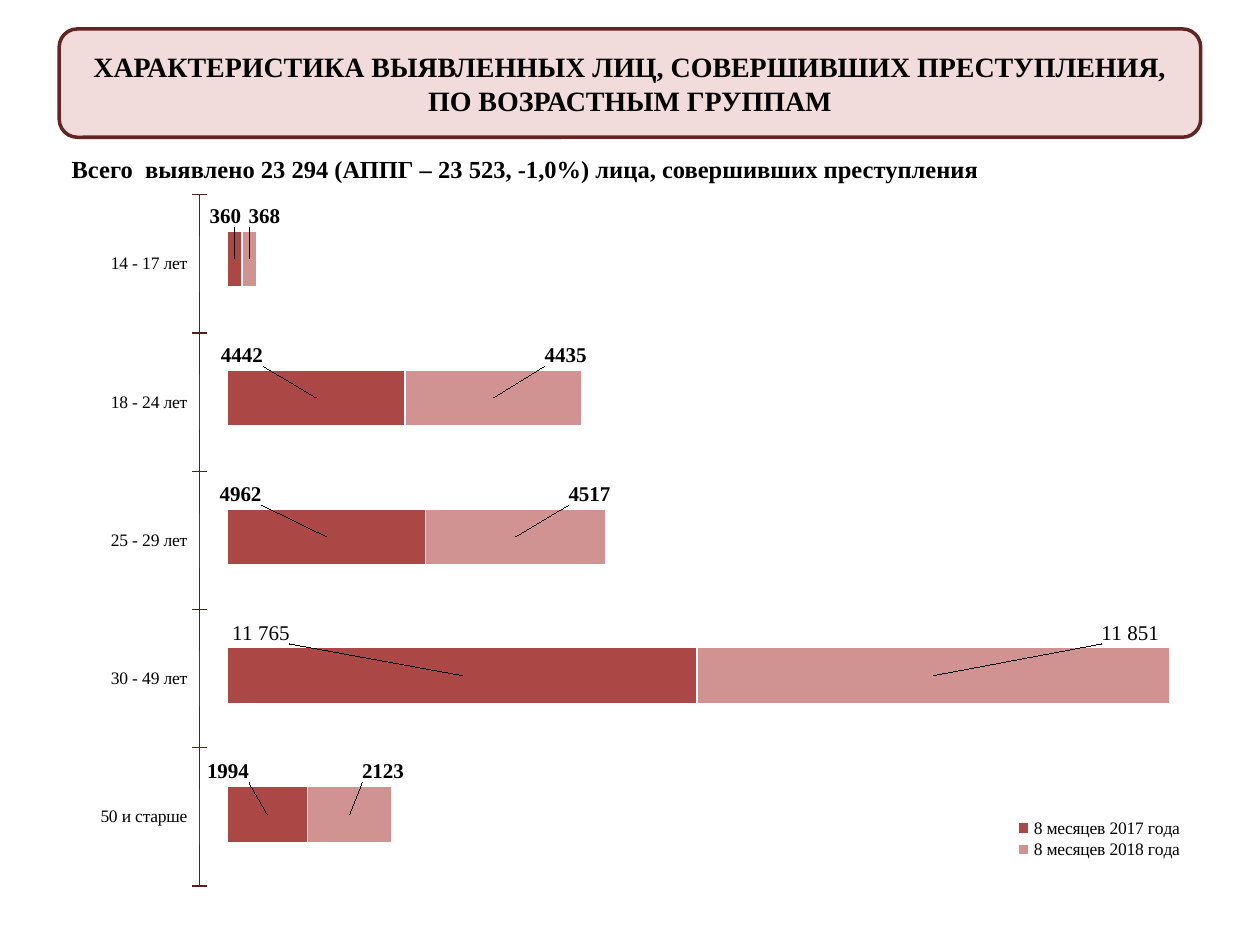
from lxml import etree
from pptx import Presentation
from pptx.chart.data import CategoryChartData
from pptx.dml.color import RGBColor
from pptx.enum import chart as charts, shapes, text
from pptx.util import Inches, Pt

COLORS = {"panel": "F2DCDB", "border": "632523", "text": "000000", "axis": "57201F",
          "2017": "AB4744", "2018": "D19392", "gap": "FFFFFF"}
SERIF = "Times New Roman"
AGES = ["50 и старше", "30 - 49 лет", "25 - 29 лет", "18 - 24 лет", "14 - 17 лет"]
VALUES = {"2017": [1994, 11765, 4962, 4442, 360],
          "2018": [2123, 11851, 4517, 4435, 368]}
# Horizontal centres of the value labels, in slide inches
LABEL_CENTRES = {"2017": [1.81, 2.07, 1.91, 1.92, 1.79],
                 "2018": [3.04, 8.97, 4.68, 4.49, 2.10]}
LABEL_RISE = -0.34
CUSTOM_LABELS = {11765: "11 765", 11851: "11 851"}
BAR_FRAME = (0.44, 1.37, 9.36, 5.81)
BAR_PLOT = {"x": 0.146, "y": 0.023, "w": 0.846, "h": 0.949}
AXIS_MAX = 25000


def color(name):
    return RGBColor.from_string(COLORS[name])


def set_layout(parent, index, values, modes=()):
    """Insert a manual chart layout, given in fractions of the chart area."""
    for old in parent.findall("{*}layout"):
        parent.remove(old)
    namespace = etree.QName(parent).namespace
    layout = parent.makeelement(f"{{{namespace}}}layout", {})
    parent.insert(index, layout)
    manual = etree.SubElement(layout, f"{{{namespace}}}manualLayout")
    for tag, value in [*modes, *values.items()]:
        etree.SubElement(manual, f"{{{namespace}}}{tag}", val=str(value))


EDGES = [("xMode", "edge"), ("yMode", "edge")]
INNER = [("layoutTarget", "inner"), *EDGES]


class SlideBuilder:
    def __init__(self, page):
        self.page = page

    def style(self, font, size, bold=False):
        for name, value in {"name": SERIF, "size": Pt(size), "bold": bold}.items():
            setattr(font, name, value)
        font.color.rgb = color("text")

    def add_words(self, box, words, size, **paragraph_format):
        box.text_frame.word_wrap = True
        para = box.text_frame.paragraphs[0]
        for name, value in paragraph_format.items():
            setattr(para, name, value)
        span = para.add_run()
        span.text = words
        self.style(span.font, size, bold=True)

    def panel(self, frame, words, size):
        box = self.page.shapes.add_shape(shapes.MSO_SHAPE.ROUNDED_RECTANGLE, *map(Inches, frame))
        box.shadow.inherit = False
        box.fill.solid()
        box.fill.fore_color.rgb = color("panel")
        box.line.color.rgb = color("border")
        box.line.width = Pt(2)
        box.text_frame.vertical_anchor = text.MSO_ANCHOR.MIDDLE
        self.add_words(box, words, size, alignment=text.PP_ALIGN.CENTER)

    def caption(self, frame, words, size):
        box = self.page.shapes.add_textbox(*map(Inches, frame))
        self.add_words(box, words, size, space_after=Pt(10))

    def stacked_bars(self, frame, plot_area, categories, series, maximum):
        data = CategoryChartData()
        data.categories = categories
        for name, values in series.items():
            data.add_series(name, values)
        chart = self.page.shapes.add_chart(
            charts.XL_CHART_TYPE.BAR_STACKED, *map(Inches, frame), data).chart
        self.style(chart.font, 10)
        chart.has_title = chart.has_legend = False
        plot = chart.plots[0]
        for name, value in {"gap_width": 150, "overlap": 100, "vary_by_categories": False}.items():
            setattr(plot, name, value)
        axis = chart.value_axis
        for name, value in {"minimum_scale": 0, "maximum_scale": maximum,
                            "has_major_gridlines": False, "visible": False}.items():
            setattr(axis, name, value)
        set_layout(plot._element.getparent(), 0, plot_area, INNER)
        return chart

    def age_axis(self, frame, plot_area):
        """Draw the age groups as the category axis of a chart with empty bars."""
        zeros = [0] * len(AGES)
        chart = self.stacked_bars(frame, plot_area, AGES,
                                  {"Series 1": zeros, "Series 2": zeros}, 1)
        axis = chart.category_axis
        axis.major_tick_mark = charts.XL_TICK_MARK.CROSS
        axis.format.line.color.rgb = color("axis")
        axis.format.line.width = Pt(0.75)
        self.style(axis.tick_labels.font, 10)

    def value_bars(self):
        series = {f"8 месяцев {year} года": values for year, values in VALUES.items()}
        categories = [str(number + 1) for number in range(len(AGES))]
        chart = self.stacked_bars(BAR_FRAME, BAR_PLOT, categories, series, AXIS_MAX)
        chart.category_axis.visible = False
        starts = [0] * len(AGES)
        for year, bars in zip(VALUES, chart.plots[0].series):
            bars.format.fill.solid()
            bars.format.fill.fore_color.rgb = color(year)
            bars.format.line.color.rgb = color("gap")
            bars.format.line.width = Pt(0.75)
            for index, value in enumerate(VALUES[year]):
                middle = starts[index] + value / 2
                self.value_label(bars.points[index].data_label, value, middle,
                                 LABEL_CENTRES[year][index])
                starts[index] += value
        self.legend(chart)

    def value_label(self, label, value, middle, centre):
        """Move a label from the middle of its bar to a centre above it."""
        left, _, width, height = BAR_FRAME
        bar_centre = left + width * (BAR_PLOT["x"] + BAR_PLOT["w"] * middle / AXIS_MAX)
        if value in CUSTOM_LABELS:
            span = label.text_frame.paragraphs[0].add_run()
            span.text = CUSTOM_LABELS[value]
            self.style(span.font, 12)
        else:
            self.style(label.font, 12, bold=True)
        label.position = charts.XL_LABEL_POSITION.CENTER
        set_layout(label._get_or_add_dLbl(), 1,
                   {"x": round((centre - bar_centre) / width, 4),
                    "y": round(LABEL_RISE / height, 4)})

    def legend(self, chart):
        chart.has_legend = True
        chart.legend.position = charts.XL_LEGEND_POSITION.RIGHT
        chart.legend.include_in_layout = False
        self.style(chart.legend.font, 10)
        set_layout(chart.legend._element, 1,
                   {"x": 0.81, "y": 0.88, "w": 0.15, "h": 0.06}, EDGES)


def main():
    deck = Presentation()
    deck.slide_width, deck.slide_height = Inches(10), Inches(7.5)
    slide = SlideBuilder(deck.slides.add_slide(deck.slide_layouts[6]))
    slide.panel((0.47, 0.23, 9.06, 0.86),
                "ХАРАКТЕРИСТИКА ВЫЯВЛЕННЫХ ЛИЦ, СОВЕРШИВШИХ ПРЕСТУПЛЕНИЯ, "
                "ПО ВОЗРАСТНЫМ ГРУППАМ", 16)
    slide.caption((0.47, 1.17, 9.06, 0.39),
                  "Всего  выявлено 23 294 (АППГ – 23 523, -1,0%) лица, "
                  "совершивших преступления", 14)
    slide.age_axis((0.02, 1.39, 2.61, 5.8), {"x": 0.599, "y": 0.027, "w": 0.342, "h": 0.946})
    slide.value_bars()
    deck.save("out.pptx")


if __name__ == "__main__":
    main()
